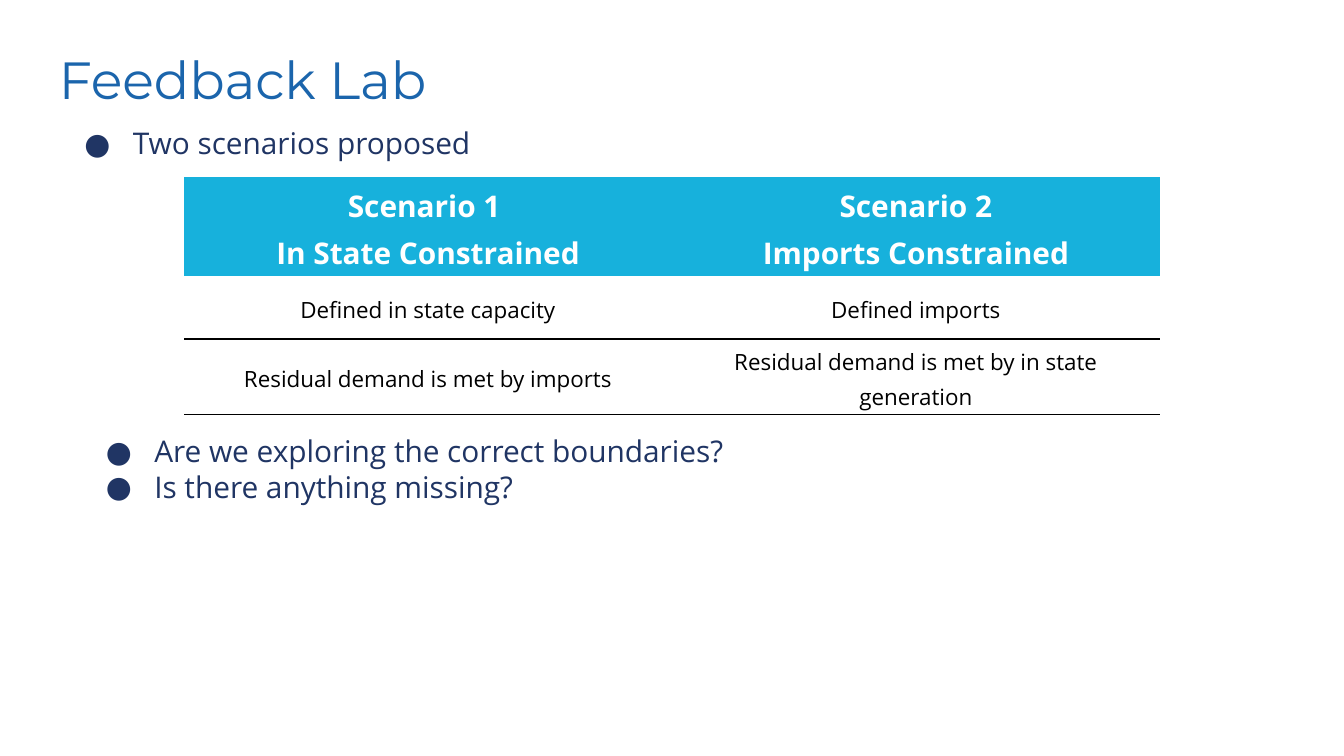
from dataclasses import dataclass

import pptx
import pptx.dml.color
import pptx.enum.text
import pptx.oxml
import pptx.oxml.ns
import pptx.util

Inches = pptx.util.Inches
Pt = pptx.util.Pt
RGBColor = pptx.dml.color.RGBColor

TITLE_BLUE = RGBColor(0x1B, 0x65, 0xAC)
NAVY = RGBColor(0x20, 0x35, 0x64)
CYAN = RGBColor(0x17, 0xB1, 0xDC)
WHITE = RGBColor(0xFF, 0xFF, 0xFF)
BLACK = RGBColor(0, 0, 0)

SLIDE_WIDTH = Inches(10)
SLIDE_HEIGHT = SLIDE_WIDTH * 9 // 16

PLAIN_TABLE_STYLE = "{2D5ABB26-0587-4C30-8999-92F81FD0307C}"
ROW_HEIGHTS = (0.58, 0.47, 0.49)
SCENARIOS = (
    ("Scenario 1 \vIn State Constrained", "Scenario 2\vImports Constrained"),
    ("Defined in state capacity", "Defined imports"),
    ("Residual demand is met by imports",
     "Residual demand is met by in state generation"),
)


@dataclass(frozen=True)
class TextBlock:
    left: float
    top: float
    width: float
    height: float
    lines: tuple[str, ...]
    font_name: str = "Open Sans"
    size: int = 16
    color: RGBColor = NAVY
    bulleted: bool = True


TEXT_BLOCKS = (
    TextBlock(0.34, 0.25, 9.14, 0.63, ("Feedback Lab",),
              "Montserrat", 28, TITLE_BLUE, bulleted=False),
    TextBlock(0.39, 0.83, 8.47, 0.48, ("Two scenarios proposed",)),
    TextBlock(0.55, 3.12, 9.04, 2.27,
              ("Are we exploring the correct boundaries?",
               "Is there anything missing?")),
)


def style_font(paragraph, name: str, size: int, color: RGBColor,
               bold: bool = False) -> None:
    font = paragraph.font
    font.name = name
    font.size = Pt(size)
    font.bold = bold
    font.color.rgb = color


def add_bullet(paragraph, font_name: str, color: RGBColor) -> None:
    properties = paragraph._p.get_or_add_pPr()
    properties.set("marL", str(Inches(0.5)))
    properties.set("indent", str(Inches(-0.36)))
    namespace = pptx.oxml.ns.nsdecls("a")
    bullet_parts = (
        f'<a:buClr {namespace}><a:srgbClr val="{color}"/></a:buClr>',
        f'<a:buFont {namespace} typeface="{font_name}"/>',
        f'<a:buChar {namespace} char="●"/>',
    )
    default_run = properties.find(pptx.oxml.ns.qn("a:defRPr"))
    for part in bullet_parts:
        default_run.addprevious(pptx.oxml.parse_xml(part))


def add_text_block(slide, block: TextBlock) -> None:
    box = slide.shapes.add_textbox(
        *map(Inches, (block.left, block.top, block.width, block.height)))
    frame = box.text_frame
    frame.word_wrap = True
    frame.margin_left = frame.margin_right = Inches(0.1)
    frame.margin_top = frame.margin_bottom = Inches(0.1)
    frame.text = "\n".join(block.lines)
    for paragraph in frame.paragraphs:
        style_font(paragraph, block.font_name, block.size, block.color)
        if block.bulleted:
            add_bullet(paragraph, block.font_name, block.color)


def add_rule(cell, side: str) -> None:
    """Draw a thin black border on one side ("T" or "B") of a cell."""
    line = pptx.oxml.parse_xml(
        f'<a:ln{side} {pptx.oxml.ns.nsdecls("a")} w="{Pt(0.75)}"><a:solidFill>'
        f'<a:srgbClr val="{BLACK}"/></a:solidFill></a:ln{side}>')
    cell._tc.get_or_add_tcPr().insert(0, line)


def fill_cell(cell, text: str, is_header: bool) -> None:
    cell.text = text
    cell.vertical_anchor = pptx.enum.text.MSO_ANCHOR.MIDDLE
    cell.margin_left = cell.margin_right = Inches(0.03)
    cell.margin_top = cell.margin_bottom = Inches(0.02)
    paragraph = cell.text_frame.paragraphs[0]
    paragraph.alignment = pptx.enum.text.PP_ALIGN.CENTER
    paragraph.line_spacing = 1.15
    if is_header:
        style_font(paragraph, "Open Sans", 16, WHITE, bold=True)
        cell.fill.solid()
        cell.fill.fore_color.rgb = CYAN
    else:
        style_font(paragraph, "Open Sans", 12, BLACK)
        cell.fill.background()
        add_rule(cell, "B")


def add_scenario_table(slide) -> None:
    frame = slide.shapes.add_table(
        len(SCENARIOS), len(SCENARIOS[0]), Inches(1.37), Inches(1.32),
        Inches(7.26), Inches(sum(ROW_HEIGHTS)))
    table = frame.table
    table.horz_banding = False
    table._tbl.tblPr.find(pptx.oxml.ns.qn("a:tableStyleId")).text = PLAIN_TABLE_STYLE
    for row_index, (height, texts) in enumerate(zip(ROW_HEIGHTS, SCENARIOS)):
        table.rows[row_index].height = Inches(height)
        for column_index, text in enumerate(texts):
            cell = table.cell(row_index, column_index)
            fill_cell(cell, text, is_header=row_index == 0)
            if row_index == 2:
                add_rule(cell, "T")


def main() -> None:
    presentation = pptx.Presentation()
    presentation.slide_width = SLIDE_WIDTH
    presentation.slide_height = SLIDE_HEIGHT
    slide = presentation.slides.add_slide(presentation.slide_layouts[6])
    add_scenario_table(slide)
    for block in TEXT_BLOCKS:
        add_text_block(slide, block)
    presentation.save("out.pptx")


if __name__ == "__main__":
    main()
